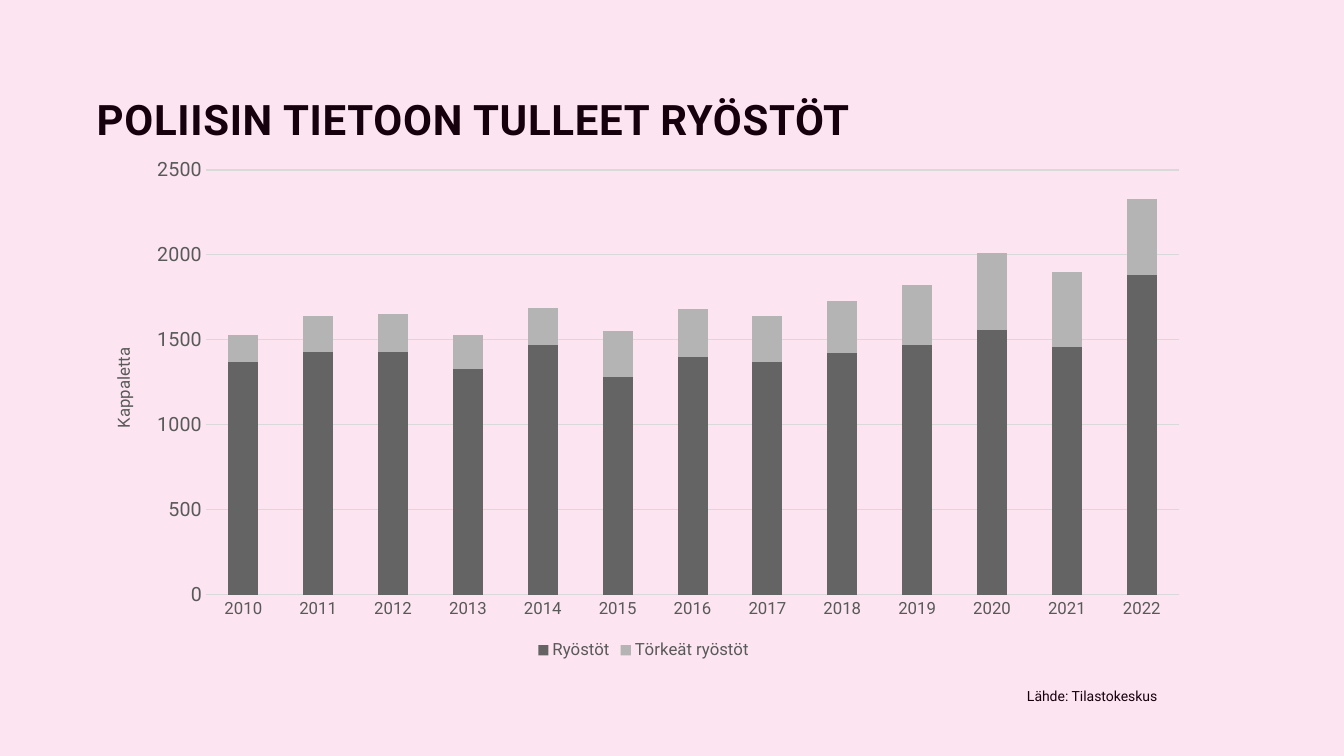
"""Build a slide with a stacked column chart of robberies reported to the police."""
from dataclasses import dataclass
from typing import Any, Optional

import lxml.etree
import pptx
import pptx.chart.data
import pptx.dml.color
import pptx.enum.chart
import pptx.enum.text
import pptx.oxml.ns
import pptx.util

Pt = pptx.util.Pt
RGBColor = pptx.dml.color.RGBColor

PINK = RGBColor(0xFC, 0xE5, 0xF1)
INK = RGBColor(0x17, 0x00, 0x0D)
LABEL_GREY = RGBColor(0x59, 0x59, 0x59)
GRID_GREY = RGBColor(0xD9, 0xD9, 0xD9)
DARK_GREY = RGBColor(0x64, 0x64, 0x64)
LIGHT_GREY = RGBColor(0xB4, 0xB4, 0xB4)
FONT = "Roboto"


@dataclass(frozen=True)
class Label:
    text: str
    left: float
    top: float
    width: float
    height: float
    size: float
    bold: bool = False
    wrap: bool = True
    anchor: Any = pptx.enum.text.MSO_ANCHOR.TOP
    line_spacing: Optional[float] = None
    letter_spacing: Optional[float] = None


@dataclass(frozen=True)
class Robberies:
    name: str
    colour: RGBColor
    counts: tuple[int, ...]


LABELS = (
    Label("POLIISIN TIETOON TULLEET RYÖSTÖT", 62, 1.5, 803.5, 104.5, 30, bold=True,
          anchor=pptx.enum.text.MSO_ANCHOR.BOTTOM, line_spacing=43.2, letter_spacing=0.5),
    Label("Lähde: Tilastokeskus", 726.5, 487.5, 115, 19.5, 10, wrap=False),
)
YEARS = range(2010, 2023)
SERIES = (
    Robberies("Ryöstöt", DARK_GREY,
              (1370, 1430, 1430, 1330, 1470, 1280, 1400, 1370, 1420, 1470, 1560, 1460, 1880)),
    Robberies("Törkeät ryöstöt", LIGHT_GREY,
              (160, 210, 220, 200, 220, 270, 280, 270, 310, 350, 450, 440, 450)),
)


def style_font(font: Any, size: float, colour: RGBColor, bold: bool = False) -> None:
    """Apply the slide typeface with a size, colour and weight."""
    font.name = FONT
    font.size = Pt(size)
    font.bold = bold
    font.color.rgb = colour


def add_label(slide: Any, label: Label) -> None:
    """Add one text box."""
    box = slide.shapes.add_textbox(
        Pt(label.left), Pt(label.top), Pt(label.width), Pt(label.height))
    frame = box.text_frame
    frame.word_wrap = label.wrap
    frame.vertical_anchor = label.anchor
    para = frame.paragraphs[0]
    if label.line_spacing is not None:
        para.line_spacing = Pt(label.line_spacing)
    span = para.add_run()
    span.text = label.text
    style_font(span.font, label.size, INK, label.bold)
    if label.letter_spacing is not None:
        span.font._element.set("spc", str(round(label.letter_spacing * 100)))


def set_layout(parent: Any, position: int, **fractions: float) -> None:
    """Place a chart part by fractions of the chart area."""
    qn = pptx.oxml.ns.qn
    for old in parent.findall(qn("c:layout")):
        parent.remove(old)
    layout = lxml.etree.Element(qn("c:layout"))
    manual = lxml.etree.SubElement(layout, qn("c:manualLayout"))
    settings: dict[str, Any] = {"xMode": "edge", "yMode": "edge", **fractions}
    if "w" in fractions:
        settings = {"layoutTarget": "inner", **settings}
    for tag, value in settings.items():
        lxml.etree.SubElement(manual, qn(f"c:{tag}")).set("val", str(value))
    parent.insert(position, layout)


def style_axes(chart: Any) -> None:
    """Format both axes, the gridlines and the value axis title."""
    no_tick = pptx.enum.chart.XL_TICK_MARK.NONE
    for axis, size in ((chart.category_axis, 12), (chart.value_axis, 14)):
        axis.major_tick_mark = no_tick
        axis.minor_tick_mark = no_tick
        style_font(axis.tick_labels.font, size, LABEL_GREY)
    counts = chart.value_axis
    counts.minimum_scale, counts.maximum_scale, counts.major_unit = 0, 2500, 500
    counts.format.line.fill.background()
    counts.has_major_gridlines = True
    for line in (chart.category_axis.format.line, counts.major_gridlines.format.line):
        line.color.rgb = GRID_GREY
        line.width = Pt(0.75)
    counts.has_title = True
    title = counts.axis_title
    frame = title.text_frame
    frame._txBody.bodyPr.set("rot", "-5400000")
    frame._txBody.bodyPr.set("vert", "horz")
    span = frame.paragraphs[0].add_run()
    span.text = "Kappaletta"
    style_font(span.font, 12, LABEL_GREY)
    set_layout(title._element, 1, x=0.02, y=0.38)


def add_robbery_chart(slide: Any) -> None:
    """Add the stacked columns of yearly counts."""
    data = pptx.chart.data.CategoryChartData()
    data.categories = [str(year) for year in YEARS]
    for series in SERIES:
        data.add_series(series.name, series.counts)
    chart = slide.shapes.add_chart(
        pptx.enum.chart.XL_CHART_TYPE.COLUMN_STACKED,
        Pt(62), Pt(106), Pt(795.5), Pt(368.5), data).chart
    chart.has_title = False
    style_font(chart.font, 12, LABEL_GREY)
    plot = chart.plots[0]
    plot.gap_width = 150
    plot.overlap = 100
    plot.vary_by_categories = False
    for drawn, series in zip(plot.series, SERIES):
        drawn.format.fill.solid()
        drawn.format.fill.fore_color.rgb = series.colour
    style_axes(chart)
    chart.has_legend = True
    chart.legend.position = pptx.enum.chart.XL_LEGEND_POSITION.BOTTOM
    chart.legend.include_in_layout = False
    style_font(chart.legend.font, 12, LABEL_GREY)
    set_layout(chart._chartSpace.chart.plotArea, 0, x=0.107, y=0.042, w=0.874, h=0.823)


def main() -> None:
    """Create and save the deck."""
    deck = pptx.Presentation()
    deck.slide_width, deck.slide_height = Pt(960), Pt(540)
    page = deck.slides.add_slide(deck.slide_layouts[6])
    page.background.fill.solid()
    page.background.fill.fore_color.rgb = PINK
    add_robbery_chart(page)
    for label in LABELS:
        add_label(page, label)
    deck.save("out.pptx")


if __name__ == "__main__":
    main()
